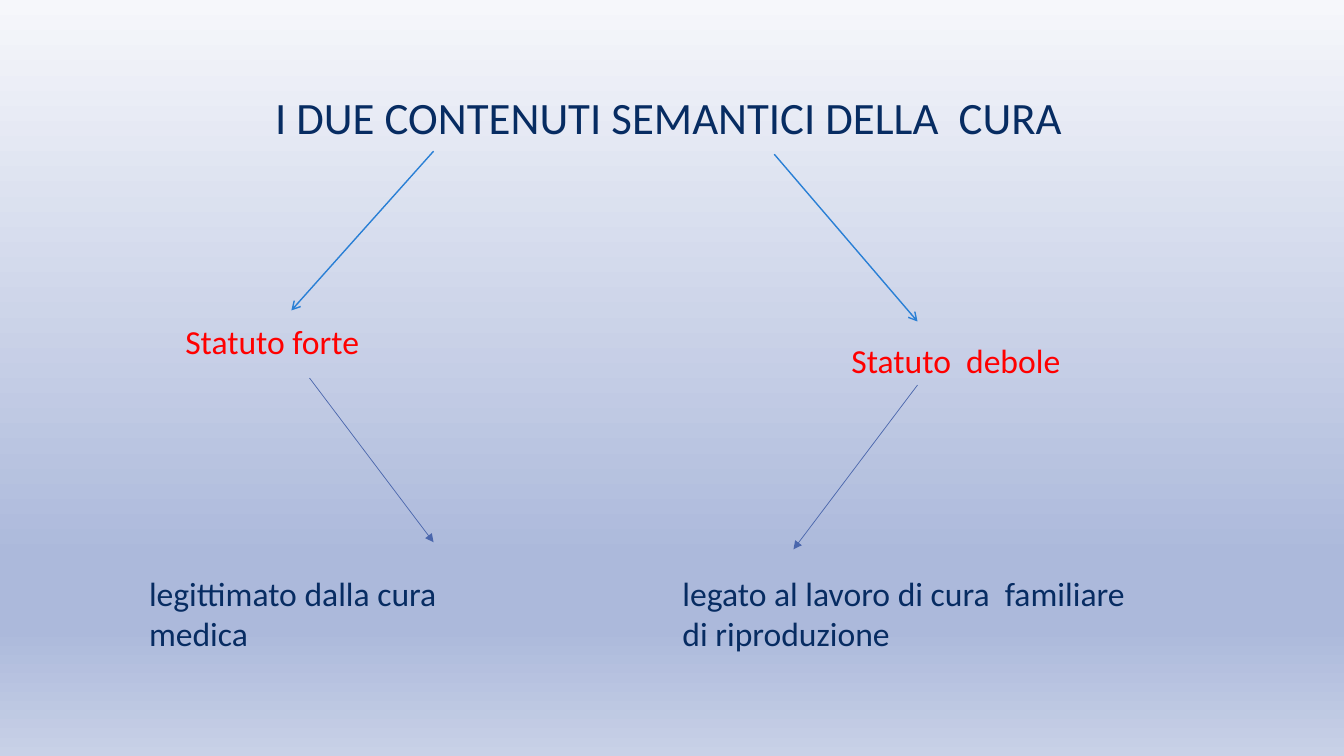
"""Build a slide on the two semantic contents of care."""
from lxml.etree import SubElement
from pptx import Presentation
from pptx.dml.color import RGBColor
from pptx.enum.shapes import MSO_CONNECTOR
from pptx.enum.text import MSO_AUTO_SIZE, PP_ALIGN
from pptx.oxml.ns import qn
from pptx.util import Inches, Pt

WIDTH = Inches(13.33)
HEIGHT = Inches(7.5)
FONT = "Calibri"
NAVY = RGBColor(0x07, 0x2C, 0x62)
RED = RGBColor(0xFF, 0x00, 0x00)
BRIGHT_BLUE = RGBColor(0x29, 0x7F, 0xD5)
DEEP_BLUE = RGBColor(0x4A, 0x66, 0xAC)
MIST = RGBColor(0xF6, 0xF7, 0xFB)
PERIWINKLE = RGBColor(0xAC, 0xB9, 0xDB)
PALE_BLUE = RGBColor(0xC8, 0xD1, 0xE7)
BACKGROUND_STOPS = [(0, MIST), (74, PERIWINKLE), (83, PERIWINKLE), (100, PALE_BLUE)]


def across(percent):
    """Return a percentage of the slide's width."""
    return round(WIDTH * percent / 100)


def down(percent):
    """Return a percentage of the slide's height."""
    return round(HEIGHT * percent / 100)


def paint_background(page):
    """Fill the page with the vertical gradient."""
    fill = page.background.fill
    fill.gradient()
    fill.gradient_angle = 270
    stop_list = page.element.find(".//" + qn("a:gsLst"))
    for stop in list(stop_list):
        stop_list.remove(stop)
    for position, color in BACKGROUND_STOPS:
        stop = SubElement(stop_list, qn("a:gs"), pos=str(position * 1000))
        SubElement(stop, qn("a:srgbClr"), val=str(color))


def add_text(page, place, pieces, color, align=PP_ALIGN.LEFT):
    """Add a wrapped text box made of (text, size) pieces."""
    left, top, width, height = place
    box = page.shapes.add_textbox(across(left), down(top), across(width), down(height))
    frame = box.text_frame
    frame.word_wrap = True
    frame.auto_size = MSO_AUTO_SIZE.SHAPE_TO_FIT_TEXT
    para = frame.paragraphs[0]
    para.alignment = align
    for text, size in pieces:
        span = para.add_run()
        span.text = text
        span.font.name = FONT
        span.font.size = Pt(size)
        span.font.color.rgb = color


def add_arrow(page, start, end, color, weight, head):
    """Add a straight arrow that points at its end."""
    arrow = page.shapes.add_connector(
        MSO_CONNECTOR.STRAIGHT,
        across(start[0]), down(start[1]), across(end[0]), down(end[1]),
    )
    arrow.line.color.rgb = color
    arrow.line.width = Pt(weight)
    properties = arrow.element.spPr
    SubElement(properties.find(qn("a:ln")), qn("a:tailEnd"), type=head)
    SubElement(properties, qn("a:effectLst"))


def main():
    """Build and save the deck."""
    deck = Presentation()
    deck.slide_width, deck.slide_height = WIDTH, HEIGHT
    page = deck.slides.add_slide(deck.slide_layouts[6])
    paint_background(page)

    add_text(page, (14.48, 11.2, 71.34, 8.53),
             [("I DUE CONTENUTI SEMANTICI DELLA  CURA ", 32)], NAVY, PP_ALIGN.CENTER)
    add_arrow(page, (32.26, 20), (21.68, 41.07), BRIGHT_BLUE, 1, "arrow")
    add_arrow(page, (57.61, 20.4), (68.27, 42.53), BRIGHT_BLUE, 1, "arrow")

    add_text(page, (13.05, 41.73, 19.28, 6.67), [("Statuto forte", 24)], RED)
    add_text(page, (62.19, 44.27, 21, 6.67), [(" ", 18), ("Statuto  debole", 24)], RED)
    add_arrow(page, (23.03, 50), (32.26, 71.73), DEEP_BLUE, 0.5, "triangle")
    add_arrow(page, (68.27, 50.93), (59.04, 72.67), DEEP_BLUE, 0.5, "triangle")

    add_text(page, (10.35, 75.07, 28.28, 12.13),
             [("legittimato dalla cura medica", 24)], NAVY)
    add_text(page, (50.04, 75.07, 36.53, 12.13),
             [("legato al lavoro di cura  familiare  di riproduzione", 24)], NAVY)
    deck.save("out.pptx")


if __name__ == "__main__":
    main()
